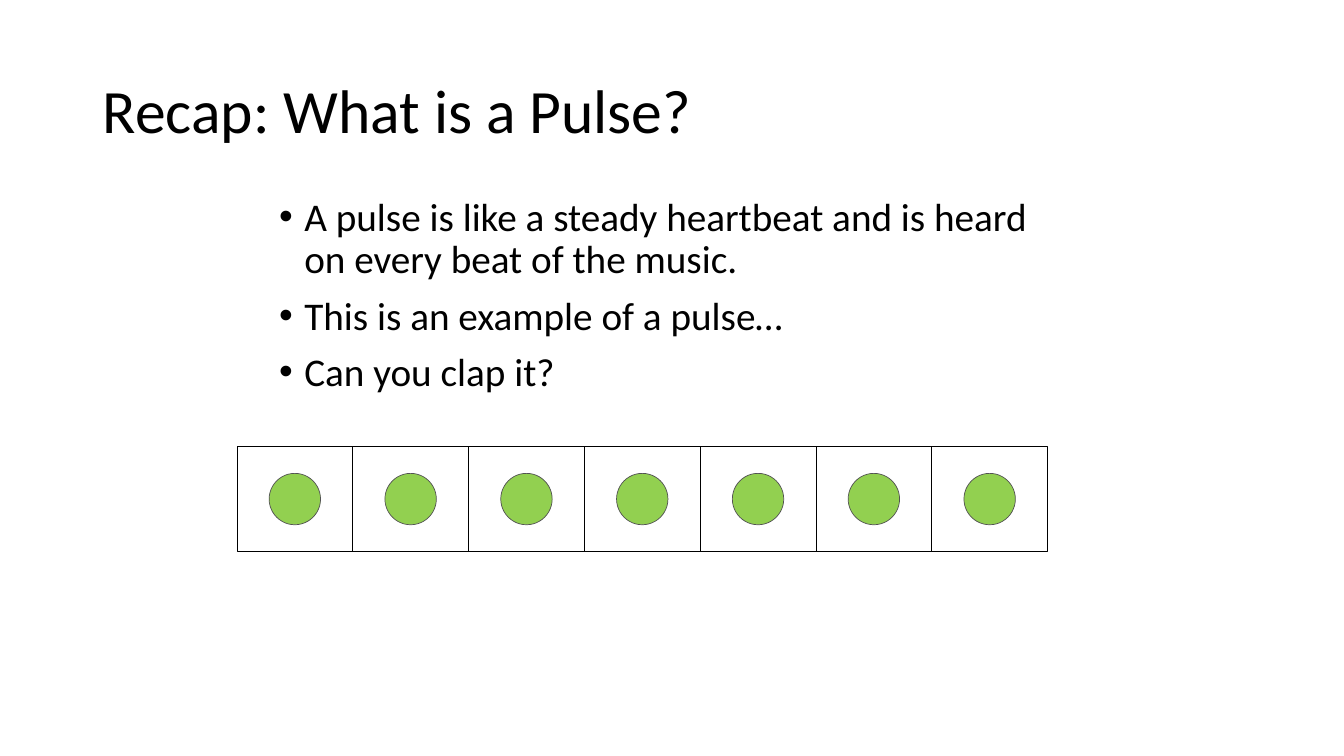
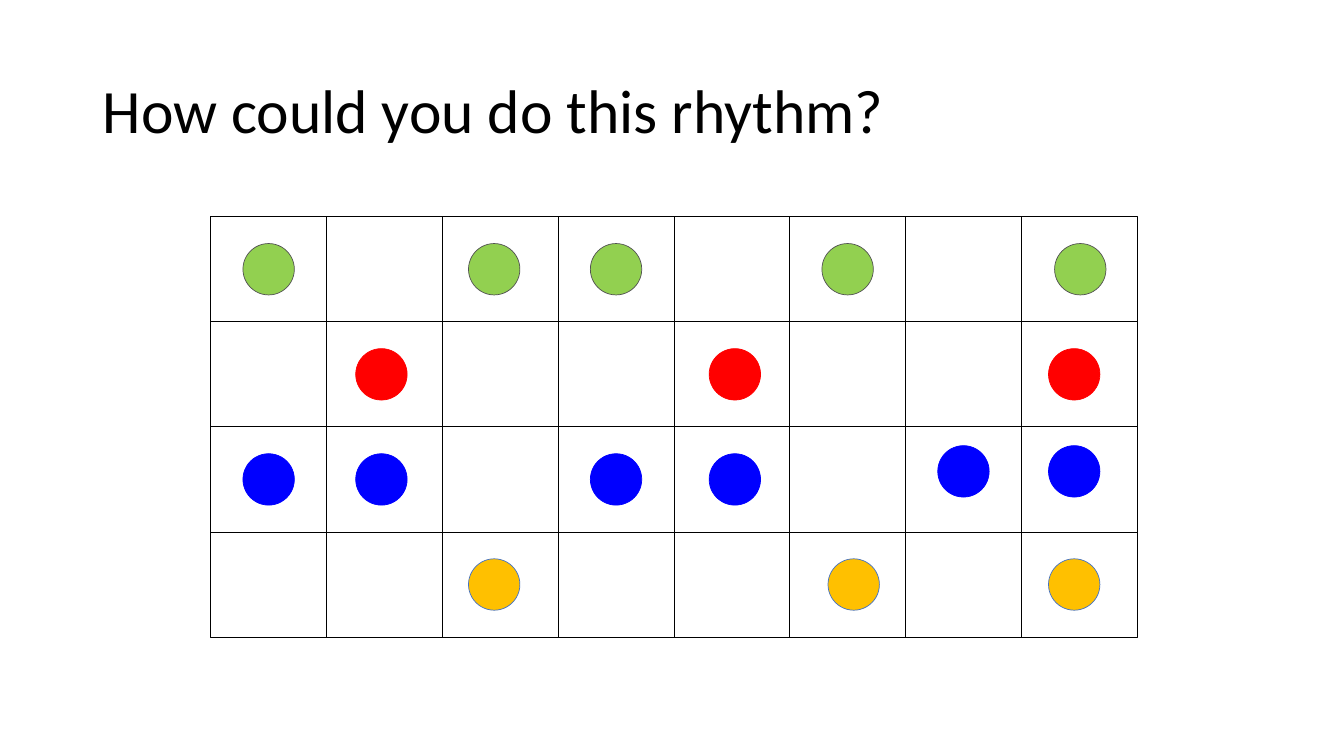
from dataclasses import dataclass

from lxml.etree import SubElement
from pptx import Presentation
from pptx.dml.color import RGBColor
from pptx.enum.shapes import MSO_SHAPE as Shape
from pptx.enum.text import MSO_ANCHOR as Anchor
from pptx.oxml.ns import qn
from pptx.util import Inches, Pt


@dataclass(frozen=True)
class Theme:
    font: str = "Calibri"
    title_size: int = 44
    body_size: int = 28
    line_width: float = 0.5
    text: str = "000000"
    background: str = "FFFFFF"
    # Dot styles: fill, outline
    green: tuple = ("92D050", "525252")
    red: tuple = ("FF0000", "FF0000")
    blue: tuple = ("0000FF", "0000FF")
    amber: tuple = ("FFC000", "4472C4")


CELL_W = 8.04 / 7
CELL_H = 4.17 / 4
DOT = 0.51


class Deck:
    def __init__(self, theme):
        self.theme = theme
        self.prs = Presentation()
        self.prs.slide_width = Inches(13.33)
        self.prs.slide_height = Inches(7.5)
        self.slide = None

    def new_slide(self, title):
        self.slide = self.prs.slides.add_slide(self.prs.slide_layouts[6])
        fill = self.slide.background.fill
        fill.solid()
        fill.fore_color.rgb = RGBColor.from_string(self.theme.background)
        self.text(0.92, 0.4, 11.5, 1.45, [title], self.theme.title_size, Anchor.MIDDLE)

    def text(self, x, y, w, h, lines, size, anchor=Anchor.TOP):
        box = self.slide.shapes.add_textbox(Inches(x), Inches(y), Inches(w), Inches(h))
        tf = box.text_frame
        tf.word_wrap = True
        tf.vertical_anchor = anchor
        tf.text = "\n".join(lines)
        for p in tf.paragraphs:
            p.line_spacing = 0.9
            font = p.runs[0].font
            font.name = self.theme.font
            font.size = Pt(size)
            font.color.rgb = RGBColor.from_string(self.theme.text)
        return tf

    def bullets(self, x, y, w, h, lines):
        tf = self.text(x, y, w, h, lines, self.theme.body_size)
        for p in tf.paragraphs:
            p.space_before = Pt(10)
            props = p._p.get_or_add_pPr()
            props.set("marL", str(Inches(0.25)))
            props.set("indent", str(-Inches(0.25)))
            SubElement(props, qn("a:buFont"), typeface="Arial")
            SubElement(props, qn("a:buChar"), char="•")

    def outline(self, shapes, kind, x, y, w, h, line, fill=None):
        """Add an outlined shape, left open unless a fill is given."""
        sp = shapes.add_shape(kind, Inches(x), Inches(y), Inches(w), Inches(h))
        sp.shadow.inherit = False
        sp.line.color.rgb = RGBColor.from_string(line)
        sp.line.width = Pt(self.theme.line_width)
        if fill:
            sp.fill.solid()
            sp.fill.fore_color.rgb = RGBColor.from_string(fill)
        else:
            sp.fill.background()

    def beat_grid(self, x, y, columns, rows):
        """Draw one row of cells per (style, dots); a dot is (column, dx, dy) off centre."""
        shapes = self.slide.shapes.add_group_shape().shapes
        for row, (style, dots) in enumerate(rows):
            top = y + row * CELL_H
            for column in range(columns):
                self.outline(shapes, Shape.RECTANGLE, x + column * CELL_W, top,
                             CELL_W, CELL_H, self.theme.text)
            fill, line = style
            for column, dx, dy in dots:
                self.outline(shapes, Shape.OVAL,
                             x + column * CELL_W + (CELL_W - DOT) / 2 + dx,
                             top + (CELL_H - DOT) / 2 + dy,
                             DOT, DOT, line, fill)


def main():
    theme = Theme()
    deck = Deck(theme)

    deck.new_slide("Recap: What is a Pulse?")
    deck.bullets(2.67, 1.91, 8, 2.77, [
        "A pulse is like a steady heartbeat and is heard on every beat of the music.",
        "This is an example of a pulse…",
        "Can you clap it?",
    ])
    deck.beat_grid(2.35, 4.43, 7, [(theme.green, [(i, 0, 0) for i in range(7)])])

    deck.new_slide("How could you do this rhythm?")
    deck.beat_grid(2.09, 2.15, 8, [
        (theme.green, [(0, 0, 0), (2, -0.06, 0), (3, 0, 0), (5, 0, 0), (7, 0.01, 0)]),
        (theme.red, [(1, -0.03, 0), (4, 0.03, 0), (7, -0.05, 0)]),
        (theme.blue, [(0, 0, 0), (1, -0.03, 0), (3, 0, 0), (4, 0.03, 0),
                      (6, 0, -0.08), (7, -0.05, -0.08)]),
        (theme.amber, [(2, -0.06, 0), (5, 0.06, 0), (7, -0.05, 0)]),
    ])

    deck.prs.save("out.pptx")


if __name__ == "__main__":
    main()
